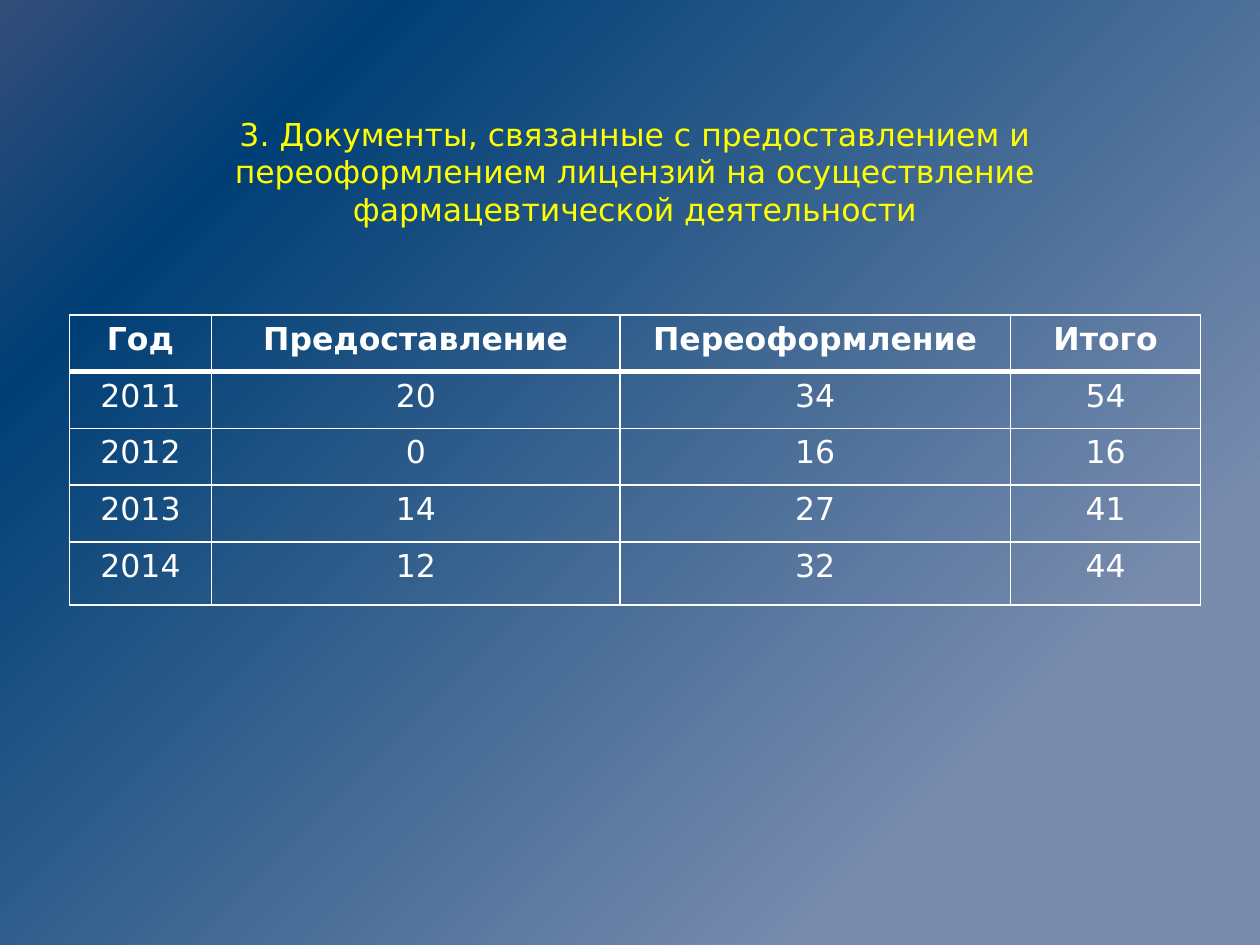
from pptx import Presentation
from pptx.dml.color import RGBColor
from pptx.enum.text import MSO_ANCHOR, MSO_AUTO_SIZE, PP_ALIGN
from pptx.oxml import parse_xml
from pptx.oxml.ns import nsdecls
from pptx.util import Inches, Pt

CENTER = PP_ALIGN.CENTER
TOP = MSO_ANCHOR.TOP
GROW = MSO_AUTO_SIZE.SHAPE_TO_FIT_TEXT
TITLE_ONLY = 5

THEME = {
    "font": "DejaVu Sans",
    "size": Pt(18),
    "title": "FFFF00",
    "text": "FFFFFF",
    "border": "FFFFFF",
    "thin": Pt(1),
    "thick": Pt(3),
    "gradient": [(20, "798CAE"), (82, "003F75"), (100, "334D79")],
}

TITLE = ("3. Документы, связанные с предоставлением и переоформлением "
         "лицензий на осуществление фармацевтической деятельности")
ROWS = [
    ["Год", "Предоставление", "Переоформление", "Итого"],
    ["2011", "20", "34", "54"],
    ["2012", "0", "16", "16"],
    ["2013", "14", "27", "41"],
    ["2014", "12", "32", "44"],
]
COLUMN_WIDTHS = [1.13, 3.24, 3.1, 1.51]
ROW_HEIGHTS = [0.45, 0.45, 0.45, 0.45, 0.5]
LEFT, WIDTH = Inches(0.55), Inches(8.98)


def write(frame, text, color, bold=False):
    """Put one centred line of formatted text into a text frame."""
    para = frame.paragraphs[0]
    para.alignment = CENTER
    span = para.add_run()
    span.text = text
    font_format = {"name": THEME["font"], "size": THEME["size"], "bold": bold}
    for name, value in font_format.items():
        setattr(span.font, name, value)
    span.font.color.rgb = RGBColor.from_string(color)


def set_borders(cell, widths):
    """Draw the cell edges; the line elements come before the fill."""
    properties = cell._tc.get_or_add_tcPr()
    for index, (side, width) in enumerate(widths.items()):
        properties.insert(index, parse_xml(
            f'<a:ln{side} {nsdecls("a")} w="{width}"><a:solidFill>'
            f'<a:srgbClr val="{THEME["border"]}"/></a:solidFill></a:ln{side}>'))


deck = Presentation()
deck.slide_width, deck.slide_height = Inches(10), Inches(7.5)
slide = deck.slides.add_slide(deck.slide_layouts[TITLE_ONLY])

# Background: gradient spreading from the bottom right corner
stops = "".join(f'<a:gs pos="{place * 1000}"><a:srgbClr val="{color}"/></a:gs>'
                for place, color in THEME["gradient"])
slide._element.cSld.insert(0, parse_xml(
    f'<p:bg {nsdecls("p", "a")}><p:bgPr><a:gradFill><a:gsLst>{stops}</a:gsLst>'
    '<a:path path="circle"><a:fillToRect l="100000" t="100000"/></a:path>'
    '</a:gradFill><a:effectLst/></p:bgPr></p:bg>'))

# Title
title = slide.shapes.title
place = {"left": LEFT, "top": Inches(0.86), "width": WIDTH, "height": Inches(0.71)}
for name, value in place.items():
    setattr(title, name, value)
frame_format = {"word_wrap": True, "vertical_anchor": TOP, "auto_size": GROW}
for name, value in frame_format.items():
    setattr(title.text_frame, name, value)
write(title.text_frame, TITLE, THEME["title"])

# Table of licences by year
table = slide.shapes.add_table(len(ROWS), len(COLUMN_WIDTHS), LEFT, Inches(2.5),
                               WIDTH, Inches(sum(ROW_HEIGHTS))).table
table.first_row = table.horz_banding = False
for column, width in zip(table.columns, COLUMN_WIDTHS):
    column.width = Inches(width)
for row, height in zip(table.rows, ROW_HEIGHTS):
    row.height = Inches(height)

for row_index, values in enumerate(ROWS):
    # The heavy rule lies between the header and the first year
    widths = dict.fromkeys("LRTB", THEME["thin"])
    if row_index == 0:
        widths["B"] = THEME["thick"]
    elif row_index == 1:
        widths["T"] = THEME["thick"]
    for column_index, value in enumerate(values):
        cell = table.cell(row_index, column_index)
        cell.fill.background()
        cell.vertical_anchor = TOP
        write(cell.text_frame, value, THEME["text"], bold=row_index == 0)
        set_borders(cell, widths)

deck.save("out.pptx")
